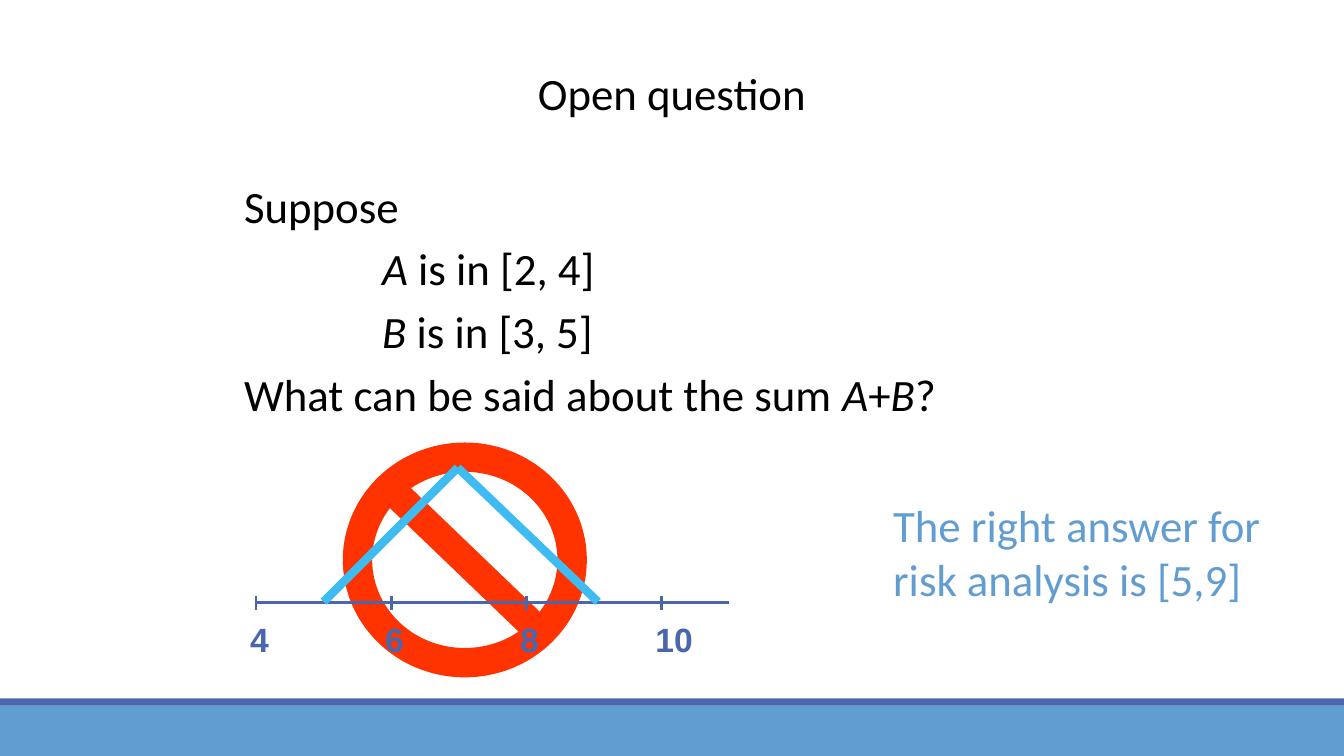
"""Build the "Open question" slide about the sum of two intervals."""
from lxml import etree
from pptx import Presentation
from pptx.dml.color import RGBColor
from pptx.enum import shapes, text
from pptx.oxml import ns
from pptx.util import Inches, Pt

COLORS = {"black": "000000", "band": "629DD1", "axis": "4A66AC",
          "sign": "FF3300", "triangle": "3EBBF0"}


def add_line(x1, y1, x2, y2, color, width):
    line = page.shapes.add_connector(shapes.MSO_CONNECTOR.STRAIGHT, Inches(x1),
                                     Inches(y1), Inches(x2), Inches(y2))
    line.line.color.rgb = RGBColor.from_string(COLORS[color])
    line.line.width = Pt(width)
    etree.SubElement(line._element.spPr, ns.qn("a:effectLst"))


def format_text(box, color, size=32, font="Calibri", bold=False):
    for para in box.text_frame.paragraphs:
        para.font.name = font
        para.font.size = Pt(size)
        para.font.bold = bold
        para.font.color.rgb = RGBColor.from_string(COLORS[color])


deck = Presentation()
deck.slide_width, deck.slide_height = Inches(13.33), Inches(7.5)
page = deck.slides.add_slide(deck.slide_layouts[1])
title, body = page.placeholders

for shape_type, left, top, width, height, color in [
        (shapes.MSO_SHAPE.RECTANGLE, 0, 7, 13.33, 0.5, "band"),
        (shapes.MSO_SHAPE.RECTANGLE, 0, 6.93, 13.33, 0.07, "axis"),
        (shapes.MSO_SHAPE.NO_SYMBOL, 3.4, 4.39, 2.42, 2.33, "sign")]:
    shape = page.shapes.add_shape(shape_type, Inches(left), Inches(top),
                                  Inches(width), Inches(height))
    shape.shadow.inherit = False
    shape.fill.solid()
    shape.fill.fore_color.rgb = RGBColor.from_string(COLORS[color])
    shape.line.fill.background()
shape.adjustments[0] = 0.125

title.left, title.top = Inches(5.22), Inches(0.6)
title.width, title.height = Inches(2.89), Inches(0.64)
title.text_frame.text = "Open question"
title.text_frame.word_wrap = False
title.text_frame.auto_size = text.MSO_AUTO_SIZE.NONE
title.text_frame.vertical_anchor = text.MSO_ANCHOR.TOP
title.text_frame.paragraphs[0].alignment = text.PP_ALIGN.CENTER
format_text(title, "black")

body.left, body.top = Inches(2.32), Inches(1.72)
body.width, body.height = Inches(8.5), Inches(4.5)
body.text_frame.auto_size = text.MSO_AUTO_SIZE.NONE
statements = [(0, ["Suppose"]),
              (1.37, ["", "A", " is in [2, 4]"]),
              (1.37, ["", "B", " is in [3, 5]"]),
              (0, ["What can be said about the sum ", "A", "+", "B", "?"])]
for row, (indent, pieces) in enumerate(statements):
    para = body.text_frame.add_paragraph() if row else body.text_frame.paragraphs[0]
    props = para._p.get_or_add_pPr()
    props.set("marL", str(Inches(indent)))
    props.set("indent", "0")
    etree.SubElement(props, ns.qn("a:buNone"))
    para.space_before = Pt(6.4 if row else 0)
    for place, piece in enumerate(pieces):
        if piece:
            span = para.add_run()
            span.text = piece
            span.font.italic = place % 2 == 1
format_text(body, "black")

add_line(7.23, 5.98, 2.54, 5.98, "axis", 2)
for step, number in enumerate(range(4, 11, 2)):
    tick = 2.54 + 1.34 * step
    add_line(tick, 5.91, tick, 6.05, "axis", 2)
    label = page.shapes.add_textbox(Inches(tick - 0.06), Inches(6.14),
                                    Inches(0.19 * len(str(number))), Inches(0.4))
    frame = label.text_frame
    frame.margin_left = frame.margin_right = frame.margin_top = frame.margin_bottom = 0
    frame.word_wrap = False
    frame.text = str(number)
    format_text(label, "axis", 24, "Arial", True)

add_line(3.21, 5.97, 4.54, 4.64, "triangle", 6)
add_line(4.54, 4.64, 5.93, 5.97, "triangle", 6)

answer = page.shapes.add_textbox(Inches(8.76), Inches(4.89), Inches(3.88), Inches(1.18))
answer.text_frame.word_wrap = False
answer.text_frame.text = "The right answer for\nrisk analysis is [5,9]"
format_text(answer, "band")

deck.save("out.pptx")
